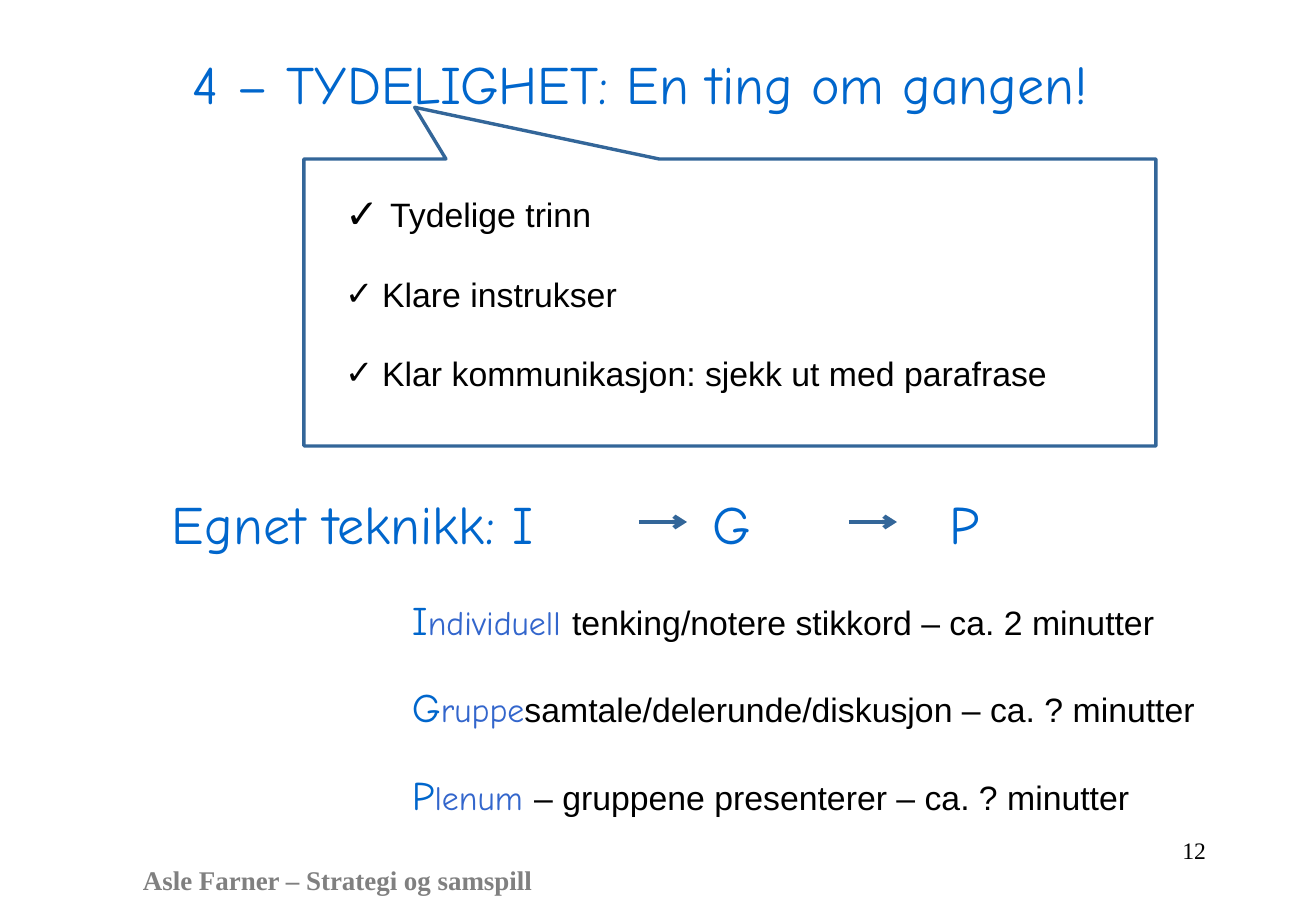
from lxml import etree
from pptx import Presentation
from pptx.dml.color import RGBColor
from pptx.enum.shapes import MSO_CONNECTOR, MSO_SHAPE
from pptx.enum.text import MSO_ANCHOR, MSO_AUTO_SIZE, PP_ALIGN
from pptx.oxml.ns import qn
from pptx.util import Emu, Pt

CALLOUT = MSO_SHAPE.RECTANGULAR_CALLOUT
STRAIGHT = MSO_CONNECTOR.STRAIGHT
TOP = MSO_ANCHOR.TOP
NO_FIT = MSO_AUTO_SIZE.NONE
LEFT, RIGHT = PP_ALIGN.LEFT, PP_ALIGN.RIGHT

EMU_PER_PX = 7526
COLOURS = {"heading": "0066CC", "accent": "3366CC", "line": "336699",
           "text": "000000", "footer": "808080"}
HAND, SANS, SERIF = "Comic Neue", "Arial", "Times New Roman"

# font, size, colour, bold
HEADING = (HAND, 32, "heading", False)
INITIAL = (HAND, 24, "heading", False)
ACCENT = (HAND, 20, "accent", False)
BODY = (SANS, 20, "text", False)
FOOTER = (SERIF, 16, "footer", True)
NUMBER = (SERIF, 14, "text", False)


def px(n):
    return Emu(n * EMU_PER_PX)


def rgb(name):
    return RGBColor.from_string(COLOURS[name])


def add_xml(parent, tag, **attributes):
    child = etree.SubElement(parent, qn(tag))
    for name, value in attributes.items():
        child.set(name, str(value))
    return child


class SlideBuilder:
    def __init__(self, prs):
        self.slide = prs.slides.add_slide(prs.slide_layouts[1])
        self.shapes = self.slide.shapes

    def fill_text(self, sp, box, paragraphs, align=LEFT, gap=0):
        """Place sp and write paragraphs, each a list of (text, style) runs."""
        sp.left, sp.top, sp.width, sp.height = map(px, box)
        tf = sp.text_frame
        tf.word_wrap = True
        tf.auto_size = NO_FIT
        tf.vertical_anchor = TOP
        for i, runs in enumerate(paragraphs):
            p = tf.add_paragraph() if i else tf.paragraphs[0]
            p.alignment = align
            p.space_before = Pt(gap if i else 0)
            for text, (font, size, colour, bold) in runs:
                r = p.add_run()
                r.text = text
                r.font.name, r.font.size, r.font.bold = font, Pt(size), bold
                r.font.color.rgb = rgb(colour)
        return tf

    def title(self, box, text):
        self.fill_text(self.shapes.title, box, [[(text, HEADING)]])

    def checklist(self, box, items, gap):
        sp = self.slide.placeholders[1]
        tf = self.fill_text(sp, box, [[(item, BODY)] for item in items], gap=gap)
        for i, p in enumerate(tf.paragraphs):
            indent, percent = (37, 100) if i else (45, 120)
            pPr = p._p.get_or_add_pPr()
            pPr.set("marL", str(px(indent)))
            pPr.set("indent", str(-px(indent)))
            add_xml(pPr, "a:buSzPct", val=percent * 1000)
            add_xml(pPr, "a:buChar", char="✓")

    def text(self, box, paragraphs, align=LEFT, gap=0):
        sp = self.shapes.add_textbox(*map(px, box))
        return self.fill_text(sp, box, paragraphs, align, gap)

    def tabbed_heading(self, box, text, stops):
        tf = self.text(box, [[(text, HEADING)]])
        tabs = add_xml(tf.paragraphs[0]._p.get_or_add_pPr(), "a:tabLst")
        for stop in stops:
            add_xml(tabs, "a:tab", pos=px(stop), algn="l")

    def callout(self, box, tip):
        sp = self.shapes.add_shape(CALLOUT, *map(px, box))
        sp.shadow.inherit = False
        sp.fill.background()
        sp.line.color.rgb = rgb("line")
        sp.line.width = Pt(2)
        sp.adjustments[0], sp.adjustments[1] = tip

    def arrow(self, x, y, length):
        sp = self.shapes.add_connector(STRAIGHT, px(x), px(y), px(x + length), px(y))
        sp.line.color.rgb = rgb("line")
        sp.line.width = Pt(2.5)
        add_xml(sp.line._get_or_add_ln(), "a:tailEnd", type="arrow")
        add_xml(sp._element.spPr, "a:effectLst")


def main():
    prs = Presentation()
    prs.slide_width, prs.slide_height = px(1316), px(911)
    s = SlideBuilder(prs)

    s.title((180, 44, 1015, 126), "4 – TYDELIGHET: En ting om gangen!")
    s.callout((304, 159, 852, 287), (-0.37, -0.68))
    s.checklist((333, 188, 808, 225),
                ["Tydelige trinn", "Klare instrukser",
                 "Klar kommunikasjon: sjekk ut med parafrase"], gap=23)

    s.tabbed_heading((160, 485, 995, 78), "Egnet teknikk: I\tG\tP", (541, 778))
    for x in (639, 849):
        s.arrow(x, 522, 48)

    steps = [("I", "ndividuell ", "tenking/notere stikkord – ca. 2 minutter"),
             ("G", "ruppe", "samtale/delerunde/diskusjon – ca. ? minutter"),
             ("P", "lenum ", "– gruppene presenterer – ca. ? minutter")]
    s.text((400, 589, 861, 242),
           [list(zip(step, (INITIAL, ACCENT, BODY))) for step in steps], gap=23)

    s.text((131, 858, 471, 40), [[("Asle Farner – Strategi og samspill", FOOTER)]])
    s.text((943, 830, 275, 61), [[("12", NUMBER)]], align=RIGHT)
    prs.save("out.pptx")


if __name__ == "__main__":
    main()
